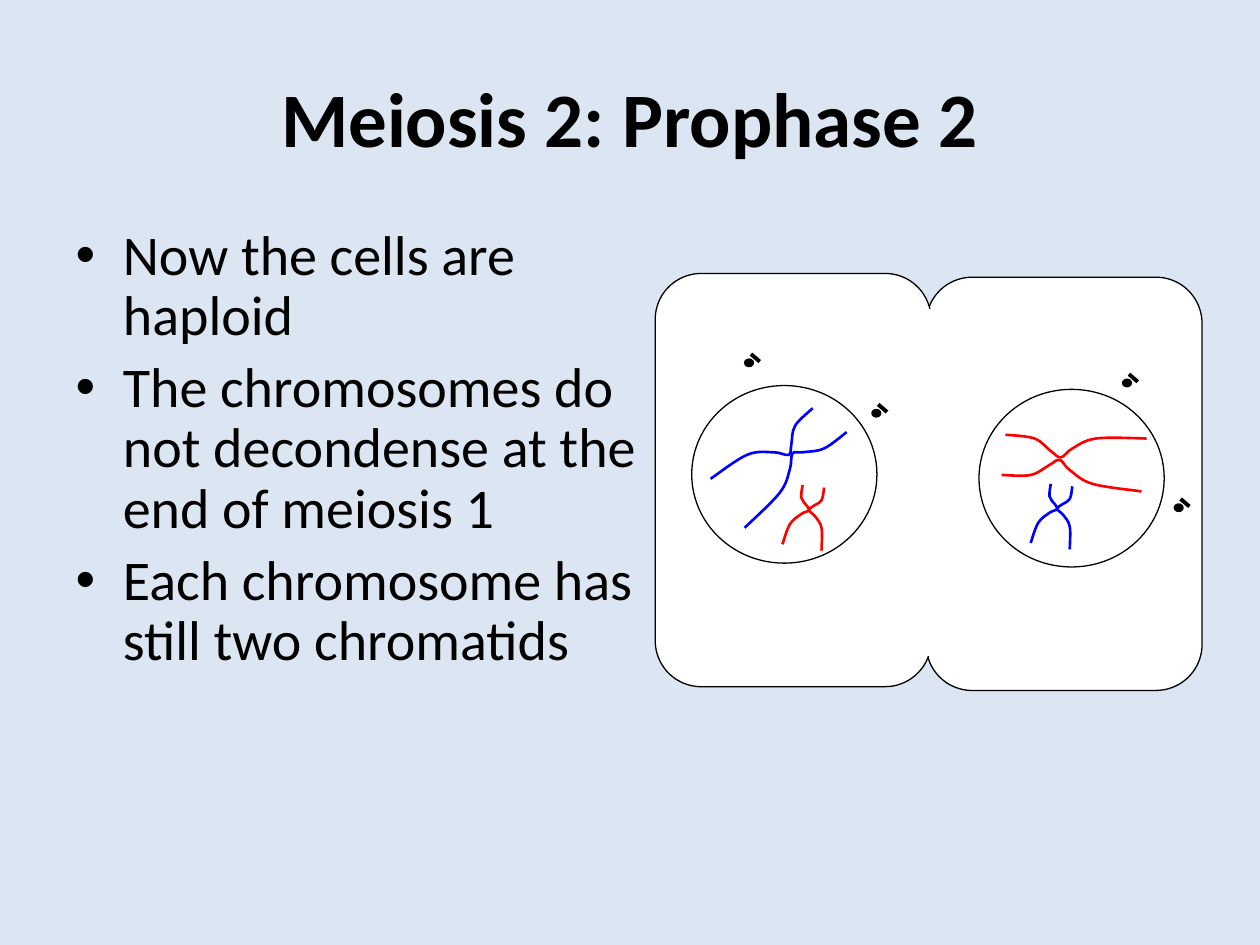
"""Build the slide on prophase 2 of meiosis."""
from pptx import Presentation
from pptx.dml.color import RGBColor
from pptx.enum.shapes import MSO_CONNECTOR as Link, MSO_SHAPE as Kind
from pptx.enum.text import MSO_ANCHOR as Anchor, MSO_AUTO_SIZE as Fit, PP_ALIGN as Align
from pptx.oxml.ns import qn
from pptx.util import Inches, Pt
from lxml.etree import SubElement

WIDE, HIGH = 10, 7.5
BLACK, WHITE, BLUE, RED, SKY = "000000", "FFFFFF", "0000FF", "FF0000", "DCE6F2"
TITLE = "Meiosis 2: Prophase 2"
POINTS = [
    "Now the cells are haploid",
    "The chromosomes do not decondense at the end of meiosis 1",
    "Each chromosome has still two chromatids",
]
CELLS = [(7.35, 2.2), (5.2, 2.17)]
NUCLEI = [(5.49, 3.06), (7.77, 3.09)]
NECK = (7.26, 2.46, 0.27, 2.74)
POLES = [(5.91, 2.85), (8.91, 3.01), (6.92, 3.25), (9.32, 4)]
LONG = [
    (BLUE, [(6.45, 3.24), (6.31, 3.38), (6.28, 3.53), (6.26, 3.61),
            (6.14, 3.59), (5.93, 3.61), (5.64, 3.8)]),
    (BLUE, [(6.72, 3.43), (6.54, 3.56), (6.37, 3.59), (6.29, 3.6),
            (6.27, 3.72), (6.19, 3.91), (5.91, 4.19)]),
    (RED, [(7.95, 3.77), (8.18, 3.77), (8.33, 3.69), (8.41, 3.65),
           (8.49, 3.73), (8.67, 3.84), (9.06, 3.9)]),
    (RED, [(7.98, 3.45), (8.21, 3.48), (8.34, 3.58), (8.42, 3.63),
           (8.51, 3.56), (8.7, 3.48), (9.1, 3.48)]),
]
SHORT = [
    [(0.16, 0), (0.15, 0.1), (0.19, 0.16), (0.21, 0.2),
     (0.15, 0.23), (0.06, 0.31), (0, 0.47)],
    [(0.33, 0.02), (0.31, 0.12), (0.24, 0.17), (0.21, 0.2),
     (0.26, 0.25), (0.31, 0.34), (0.31, 0.52)],
]
PAIRS = [(BLUE, 8.18, 3.84), (RED, 6.21, 3.85)]


def tint(code):
    return RGBColor.from_string(code)


def place(item, *box):
    item.left, item.top, item.width, item.height = map(Inches, box)


def write(par, text, size=32, bold=False, color=BLACK, **form):
    par.text = text
    for name, value in form.items():
        setattr(par, name, value)
    font = par.font
    font.name, font.size, font.bold = "Calibri", Pt(size), bold
    font.color.rgb = tint(color)


def style(item, fill=None, line=BLACK, width=0.75):
    item.shadow.inherit = False
    if fill:
        item.fill.solid()
        item.fill.fore_color.rgb = tint(fill)
    else:
        item.fill.background()
    item.line.color.rgb = tint(line)
    item.line.width = Pt(width)


def draw(shapes, kind, box, **look):
    item = shapes.add_shape(kind, *map(Inches, box))
    style(item, **look)
    return item


def bend(item):
    """Turn the straight parts of an outline into smooth curves."""
    dots = [(int(dot.get("x")), int(dot.get("y")))
            for dot in item.element.iter(qn("a:pt"))]
    ends = [dots[0], *dots, dots[-1]]
    parts = list(item.element.iter(qn("a:lnTo")))
    for part, a, b, c, d in zip(parts, ends, ends[1:], ends[2:], ends[3:]):
        near = [q + (r - p) / 6 for p, q, r in zip(a, b, c)]
        far = [r - (s - q) / 6 for q, r, s in zip(b, c, d)]
        curve = SubElement(part.getparent(), qn("a:cubicBezTo"))
        for x, y in (near, far, c):
            SubElement(curve, qn("a:pt"), x=str(round(x)), y=str(round(y)))
        part.getparent().replace(part, curve)


def strand(shapes, color, knots):
    first, *rest = [(Inches(x), Inches(y)) for x, y in knots]
    pen = shapes.build_freeform(*first)
    pen.add_line_segments(rest, close=False)
    item = pen.convert_to_shape()
    bend(item)
    style(item, line=color, width=1.5)


def pole(shapes, x, y):
    ends = x + 0.05, y - 0.04, x + 0.12, y + 0.02
    rod = shapes.add_connector(Link.STRAIGHT, *map(Inches, ends))
    rod.line.color.rgb, rod.line.width = tint(BLACK), Pt(2.25)
    SubElement(rod.element.spPr, qn("a:effectLst"))
    draw(shapes, Kind.OVAL, (x, y, 0.07, 0.06), fill=BLACK)


def main():
    deck = Presentation()
    deck.slide_width, deck.slide_height = Inches(WIDE), Inches(HIGH)
    slide = deck.slides.add_slide(deck.slide_layouts[1])
    slide.background.fill.solid()
    slide.background.fill.fore_color.rgb = tint(SKY)
    shapes = slide.shapes

    head, body = shapes.title, slide.placeholders[1]
    place(head, 0.5, 0.3, 9, 1.25)
    head.text_frame.vertical_anchor = Anchor.MIDDLE
    write(head.text_frame.paragraphs[0], TITLE, size=44, bold=True,
          alignment=Align.CENTER)
    place(body, 0.5, 1.75, 4.7, 4.95)
    frame = body.text_frame
    frame.auto_size = Fit.NONE
    for i, text in enumerate(POINTS):
        par = frame.add_paragraph() if i else frame.paragraphs[0]
        write(par, text, line_spacing=0.9, space_before=Pt(6.4 if i else 0))

    for x, y in CELLS:
        cell = draw(shapes, Kind.ROUNDED_RECTANGLE, (x, y, 2.19, 3.28), fill=WHITE)
        cell.adjustments[0] = 0.167
    for color, knots in LONG:
        strand(shapes, color, knots)
    for color, x, y in PAIRS:
        for knots in SHORT:
            strand(shapes, color, [(x + u, y + v) for u, v in knots])
    for x, y in NUCLEI:
        draw(shapes, Kind.OVAL, (x, y, 1.47, 1.41))
    draw(shapes, Kind.RECTANGLE, NECK, fill=WHITE, line=WHITE)
    for x, y in POLES:
        pole(shapes, x, y)
    deck.save("out.pptx")


if __name__ == "__main__":
    main()
